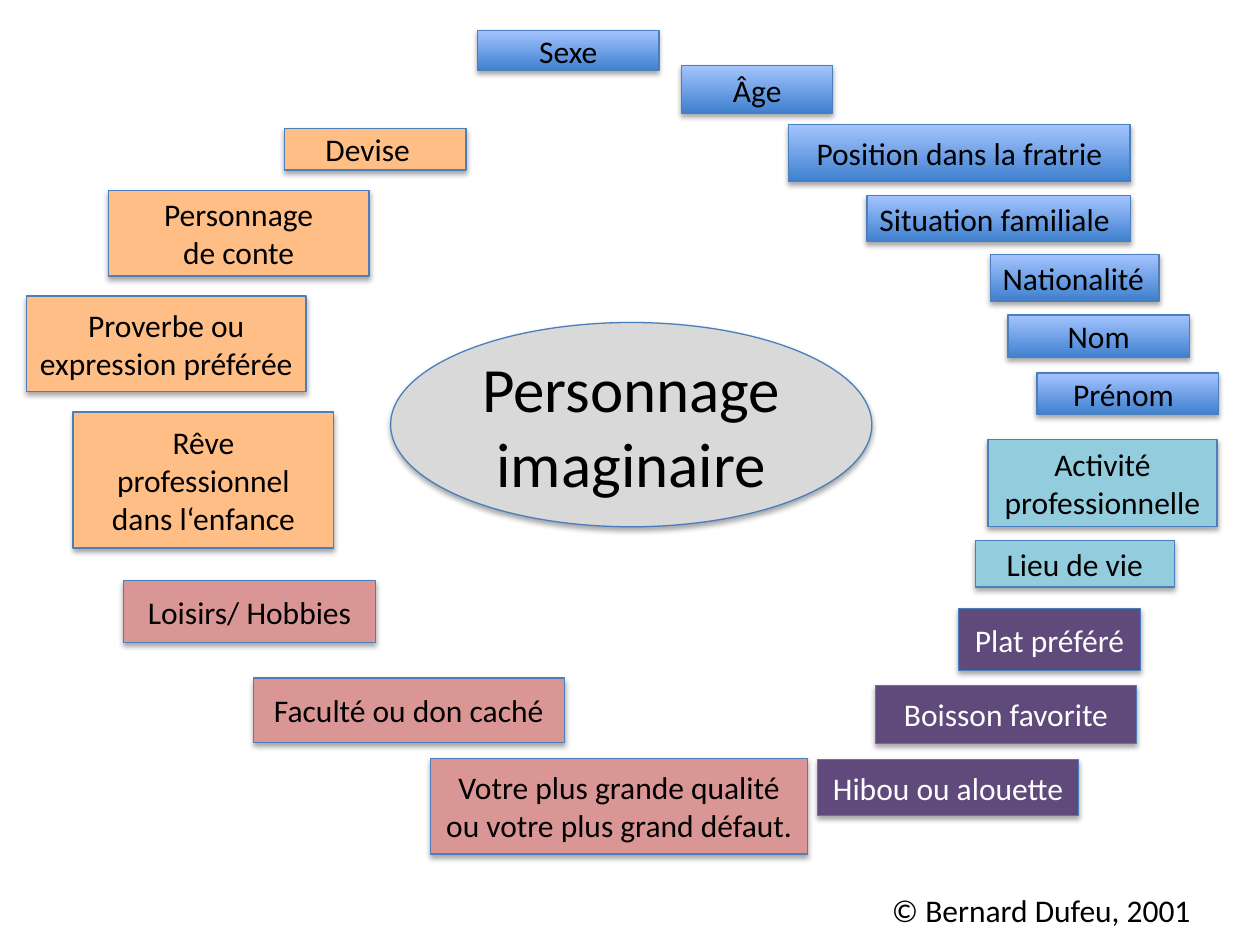
from lxml import etree
from pptx import Presentation, util as u
from pptx.dml.color import RGBColor
from pptx.enum import shapes, text
from pptx.oxml.ns import qn

BLACK, WHITE, OUTLINE = "000000", "FFFFFF", "4B7EBC"
GRADIENT = ("3F80CE", "A4C4FF")
CENTRE = ("Personnage\nimaginaire", 223.2, 184.3, 275, 116.7)
CREDIT = ("© Bernard Dufeu, 2001", 502.6, 505.4, 208, 28.8)
THEMES = [
    {"name": "identité", "fill": GRADIENT, "ink": BLACK, "topics": [
        ("Sexe", 272.9, 17.3, 103.7, 23),
        ("Âge", 389.5, 37.4, 86.4, 27.4),
        ("Position dans la fratrie", 450.7, 71.3, 195.1, 32.4),
        ("Situation familiale", 495.4, 111.6, 150.5, 26.6),
        ("Nationalité", 565.9, 145.4, 96.5, 26.6),
        ("Nom", 576, 180, 103.7, 24.5),
        ("Prénom", 592.6, 213.1, 103.7, 23.8)]},
    {"name": "activité", "fill": "93CDDD", "ink": BLACK, "topics": [
        ("Activité professionnelle", 564.5, 251.3, 131, 49.7),
        ("Lieu de vie", 557.3, 308.9, 113.8, 26.6)]},
    {"name": "goûts", "fill": "604A7B", "ink": WHITE, "topics": [
        ("Plat préféré", 547.9, 347.8, 103.7, 35.3),
        ("Boisson favorite", 500.4, 391.7, 149, 33.1),
        ("Hibou ou alouette", 467.3, 434.2, 149, 31.7)]},
    {"name": "talents", "fill": "D99694", "ink": BLACK, "topics": [
        ("Votre plus grande qualité ou votre plus grand défaut.",
         246.2, 433.4, 215.3, 54.7),
        ("Faculté ou don caché", 144.7, 387.4, 177.8, 36.7),
        ("Loisirs/ Hobbies", 70.6, 331.9, 144, 35.3)]},
    {"name": "imaginaire", "fill": "FFBE86", "ink": BLACK, "topics": [
        ("Rêve professionnel\ndans l‘enfance", 41.8, 235.4, 149, 77.8),
        ("Proverbe ou\nexpression préférée", 15.1, 169.2, 159.8, 54.7),
        ("Personnage\nde conte", 61.9, 108.7, 149, 49),
        ("Devise", 162.7, 73.4, 103.7, 23.8)]},
]
LEFT_ALIGNED = {"Situation familiale", "Nationalité"}
RIGHT_INSET = {"Prénom": 12, "Devise": 16}


def rgb(code):
    """Return the colour for a hex string."""
    return RGBColor.from_string(code)


def write(frame, words, size, ink, align):
    """Put the words into a text frame, one paragraph a line."""
    frame.text = words
    frame.word_wrap = True
    for paragraph in frame.paragraphs:
        paragraph.alignment = align
        for key, value in {"name": "Calibri", "size": u.Pt(size)}.items():
            setattr(paragraph.font, key, value)
        paragraph.font.color.rgb = rgb(ink)


def paint(shape, fill):
    """Fill a shape with one colour or with a bottom-to-top gradient."""
    if isinstance(fill, str):
        shape.fill.solid()
        shape.fill.fore_color.rgb = rgb(fill)
        return
    shape.fill.gradient()
    shape.fill.gradient_angle = 90
    for stop, code in zip(shape.fill.gradient_stops, fill):
        stop.color.rgb = rgb(code)


def cast_shadow(shape):
    """Give a shape a soft shadow straight below it."""
    shape.shadow.inherit = False
    effects = shape.element.spPr.find(qn("a:effectLst"))
    shadow = etree.SubElement(effects, qn("a:outerShdw"), {
        "blurRad": str(u.Pt(3.1)), "dist": str(u.Pt(1.8)),
        "dir": "5400000", "rotWithShape": "0"})
    tint = etree.SubElement(shadow, qn("a:srgbClr"), val=BLACK)
    etree.SubElement(tint, qn("a:alpha"), val="35000")


def add_topic(slide, kind, topic, fill, ink, size):
    """Draw one outlined, shadowed shape with its words."""
    words, *box = topic
    shape = slide.shapes.add_shape(kind, *map(u.Pt, box))
    paint(shape, fill)
    shape.line.color.rgb = rgb(OUTLINE)
    shape.line.width = u.Pt(0.75)
    cast_shadow(shape)
    align = text.PP_ALIGN.LEFT if words in LEFT_ALIGNED else text.PP_ALIGN.CENTER
    write(shape.text_frame, words, size, ink, align)
    shape.text_frame.vertical_anchor = text.MSO_ANCHOR.MIDDLE
    if words in RIGHT_INSET:
        shape.text_frame.margin_right = u.Pt(RIGHT_INSET[words])


def main():
    """Build the mind map of an imaginary character."""
    deck = Presentation()
    deck.slide_width, deck.slide_height = u.Pt(720), u.Pt(540)
    slide = deck.slides.add_slide(deck.slide_layouts[6])
    add_topic(slide, shapes.MSO_SHAPE.OVAL, CENTRE, "D9D9D9", BLACK, 36)
    for theme in THEMES:
        for topic in theme["topics"]:
            add_topic(slide, shapes.MSO_SHAPE.RECTANGLE, topic,
                      theme["fill"], theme["ink"], 18)
    words, *box = CREDIT
    credit = slide.shapes.add_textbox(*map(u.Pt, box))
    write(credit.text_frame, words, 18, BLACK, text.PP_ALIGN.LEFT)
    credit.text_frame.auto_size = text.MSO_AUTO_SIZE.SHAPE_TO_FIT_TEXT
    deck.save("out.pptx")


if __name__ == "__main__":
    main()
